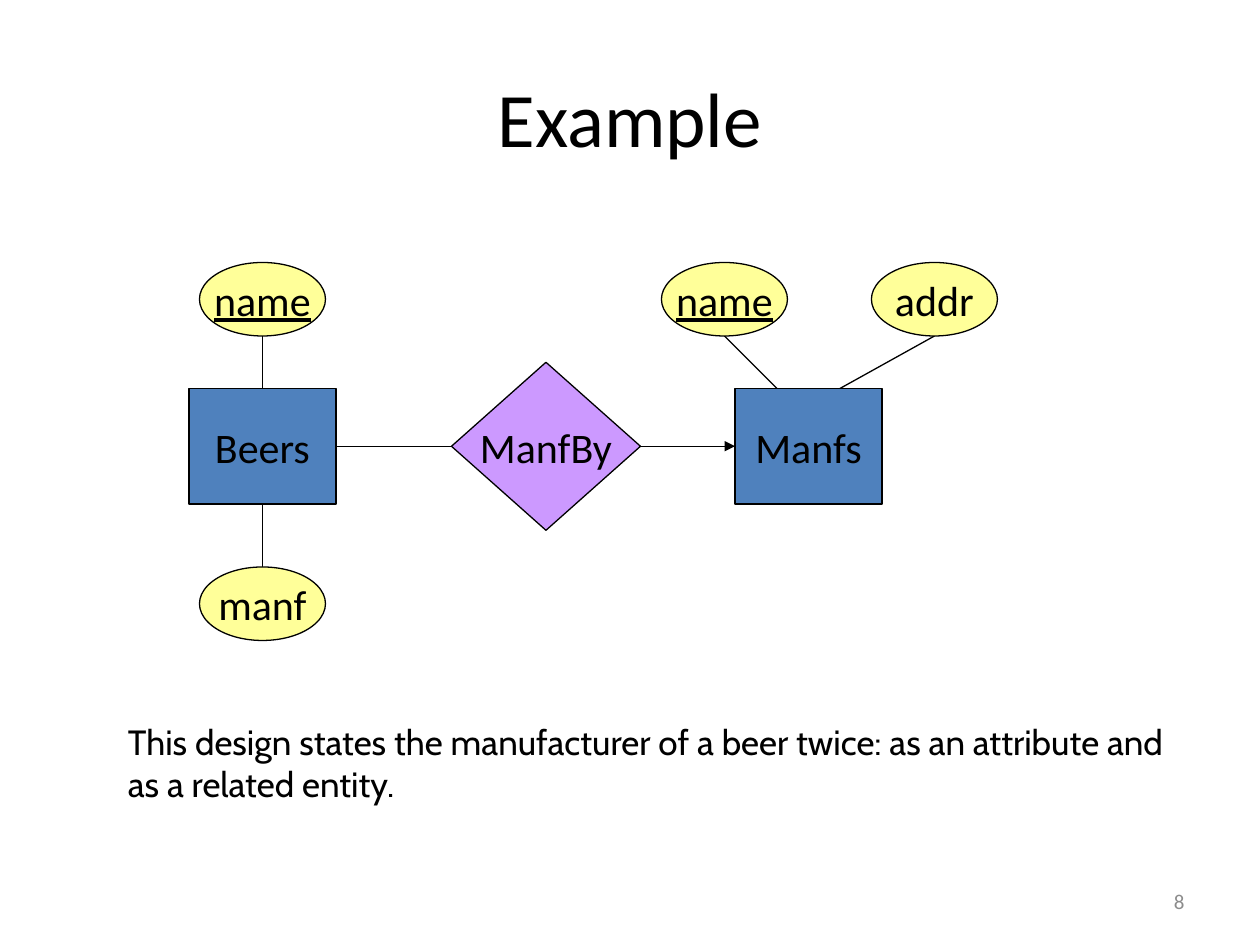
from collections import namedtuple
from dataclasses import dataclass

from lxml.etree import SubElement
from pptx import Presentation
from pptx.dml.color import RGBColor
from pptx.enum.shapes import MSO_CONNECTOR as Connector, MSO_SHAPE as Preset
from pptx.enum.text import MSO_ANCHOR as Anchor, PP_ALIGN as Align
from pptx.oxml.ns import qn
from pptx.util import Pt

Box = namedtuple("Box", "left top width height")


@dataclass(frozen=True)
class Theme:
    ink: RGBColor = RGBColor(0x00, 0x00, 0x00)
    muted: RGBColor = RGBColor(0x8C, 0x8C, 0x8C)
    entity: RGBColor = RGBColor(0x4F, 0x81, 0xBD)
    relationship: RGBColor = RGBColor(0xCC, 0x99, 0xFF)
    attribute: RGBColor = RGBColor(0xFF, 0xFF, 0x99)
    font: str = "Calibri"
    note_font: str = "Cabin"
    title_size: int = 44
    node_size: int = 24
    note_size: int = 20
    number_size: int = 12
    line_width: float = 0.75


THEME = Theme()


def write(frame, text, size, align, anchor, color=THEME.ink, font=THEME.font):
    frame.vertical_anchor = anchor
    para = frame.paragraphs[0]
    para.text = text
    para.alignment = align
    para.font.name = font
    para.font.size = Pt(size)
    para.font.color.rgb = color
    return para


def add_text(page, box, text, size, align, anchor=Anchor.MIDDLE, **style):
    frame = page.shapes.add_textbox(*map(Pt, box)).text_frame
    frame.word_wrap = True
    write(frame, text, size, align, anchor, **style)


def add_node(page, box, preset, fill, text, key=False):
    """Add a labelled node; the label of a key attribute is underlined."""
    node = page.shapes.add_shape(preset, *map(Pt, box))
    node.shadow.inherit = False
    node.fill.solid()
    node.fill.fore_color.rgb = fill
    node.line.color.rgb = THEME.ink
    node.line.width = Pt(THEME.line_width)
    node.text_frame.word_wrap = False
    para = write(node.text_frame, text, THEME.node_size, Align.CENTER, Anchor.MIDDLE)
    if key:
        para.font.underline = True


def add_link(page, start, end, arrow=False):
    link = page.shapes.add_connector(Connector.STRAIGHT, *map(Pt, (*start, *end)))
    link.line.color.rgb = THEME.ink
    link.line.width = Pt(THEME.line_width)
    if arrow:
        SubElement(link.line._get_or_add_ln(), qn("a:tailEnd"), type="triangle")
    SubElement(link._element.spPr, qn("a:effectLst"))


def add_diagram(page, box):
    """Place entities, attributes and their relationship within the box."""
    entity_width, entity_height = 84, 66
    oval_width, oval_height = 72, 42
    diamond_width, diamond_height = 108, 96
    beers_x = box.left + entity_width / 2
    manfs_x = beers_x + 312
    diamond_x = beers_x + 162
    entity_top = box.top + 72
    entity_bottom = entity_top + entity_height
    middle = entity_top + entity_height / 2
    oval_bottom = box.top + oval_height
    lower_oval_top = box.top + box.height - oval_height
    manfs_name_x, addr_x = manfs_x - 48, manfs_x + 72

    add_link(page, (beers_x, oval_bottom), (beers_x, entity_top))
    add_link(page, (beers_x, lower_oval_top), (beers_x, entity_bottom))
    add_link(page, (manfs_name_x, oval_bottom), (manfs_x - 18, entity_top))
    add_link(page, (addr_x, oval_bottom), (manfs_x + 18, entity_top))

    diamond_left = diamond_x - diamond_width / 2
    diamond_right = diamond_x + diamond_width / 2
    arrow_start = diamond_right + 6
    add_link(page, (diamond_left, middle), (beers_x + entity_width / 2, middle))
    add_link(page, (diamond_right, middle), (arrow_start, middle))
    add_link(page, (arrow_start, middle), (manfs_x - entity_width / 2, middle), arrow=True)

    for center, text in ((beers_x, "Beers"), (manfs_x, "Manfs")):
        entity = Box(center - entity_width / 2, entity_top, entity_width, entity_height)
        add_node(page, entity, Preset.RECTANGLE, THEME.entity, text)

    diamond = Box(diamond_left, middle - diamond_height / 2, diamond_width, diamond_height)
    add_node(page, diamond, Preset.DIAMOND, THEME.relationship, "ManfBy")

    for center, top, text, key in (
        (beers_x, box.top, "name", True),
        (manfs_name_x, box.top, "name", True),
        (addr_x, box.top, "addr", False),
        (beers_x, lower_oval_top, "manf", False),
    ):
        oval = Box(center - oval_width / 2, top, oval_width, oval_height)
        add_node(page, oval, Preset.OVAL, THEME.attribute, text, key)


def main():
    deck = Presentation()
    deck.slide_width, deck.slide_height = Pt(720), Pt(540)
    page = deck.slides.add_slide(deck.slide_layouts[6])
    add_text(page, Box(36, 21.6, 648, 90), "Example", THEME.title_size, Align.CENTER)
    add_diagram(page, Box(108, 150, 462, 216))
    add_text(
        page, Box(66, 408, 618, 55.5),
        "This design states the manufacturer of a beer twice: "
        "as an attribute and as a related entity.",
        THEME.note_size, Align.LEFT, Anchor.TOP, font=THEME.note_font,
    )
    add_text(page, Box(516, 500.5, 168, 28.75), "8", THEME.number_size, Align.RIGHT,
             color=THEME.muted)
    deck.save("out.pptx")


if __name__ == "__main__":
    main()
